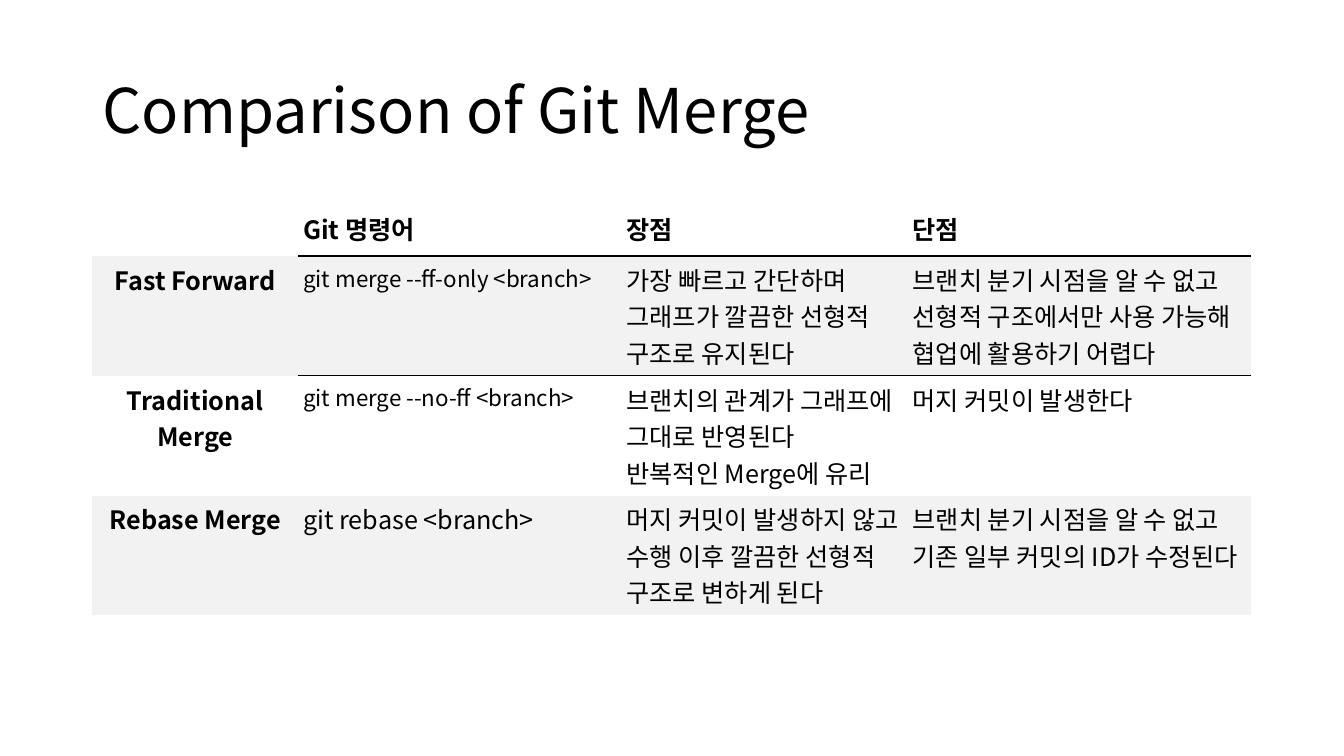
from lxml import etree
from pptx import Presentation
from pptx import util as u
from pptx.dml import color
from pptx.enum import text
from pptx.oxml import ns

ROWS = [
    ["", "Git 명령어", "장점", "단점"],
    ["Fast Forward", "git merge --ff-only <branch>",
     "가장 빠르고 간단하며\v그래프가 깔끔한 선형적\v구조로 유지된다",
     "브랜치 분기 시점을 알 수 없고\n선형적 구조에서만 사용 가능해 협업에 활용하기 어렵다"],
    ["Traditional\nMerge", "git merge --no-ff <branch>",
     "브랜치의 관계가 그래프에\v그대로 반영된다\n반복적인 Merge에 유리",
     "머지 커밋이 발생한다"],
    ["Rebase Merge", "git rebase <branch>",
     "머지 커밋이 발생하지 않고\v수행 이후 깔끔한 선형적 구조로 변하게 된다",
     "브랜치 분기 시점을 알 수 없고\n기존 일부 커밋의 ID가 수정된다"],
]
WIDTHS = [5.18, 8.15, 7.21, 8.66]
HEIGHTS = [1.37, 2.9, 2.9, 2.9]
NO_STYLE = "{2D5ABB26-0587-4C30-8999-92F81FD0307C}"


def paint(fill, code):
    fill.solid()
    fill.fore_color.rgb = color.RGBColor.from_string(code)


def write(frame, words, font, size=18, bold=False, ink="000000",
          align=text.PP_ALIGN.LEFT, space=None):
    frame.text = words
    for par in frame.paragraphs:
        par.alignment = align
        par.line_spacing = space
        for run in par.runs:
            run.font.name = font
            run.font.size = u.Pt(size)
            run.font.bold = bold
            paint(run.font.fill, ink)
            east = etree.SubElement(run.font._element, ns.qn("a:ea"))
            east.set("typeface", font)
            run.font._element.find(ns.qn("a:latin")).addnext(east)


class Deck:
    font = "Noto Sans CJK KR"
    band = "F2F2F2"
    line = "000000"

    def __init__(self):
        self.file = Presentation()
        self.file.slide_width = u.Cm(33.87)
        self.file.slide_height = u.Cm(19.05)
        self.slide = self.file.slides.add_slide(self.file.slide_layouts[5])

    def title(self, words, left, top, width, height):
        box = self.slide.shapes.title
        box.left, box.top = u.Cm(left), u.Cm(top)
        box.width, box.height = u.Cm(width), u.Cm(height)
        frame = box.text_frame
        write(frame, words, self.font, size=44, space=0.9)
        frame.vertical_anchor = text.MSO_ANCHOR.MIDDLE
        frame.auto_size = text.MSO_AUTO_SIZE.NONE

    def edge(self, cell, side):
        line = etree.Element(ns.qn("a:" + side), w=str(u.Pt(1)))
        fill = etree.SubElement(line, ns.qn("a:solidFill"))
        etree.SubElement(fill, ns.qn("a:srgbClr"), val=self.line)
        cell._tc.get_or_add_tcPr().insert(0, line)

    def cell(self, cell, words, row, col):
        cell.margin_left = cell.margin_right = u.Cm(0.13)
        cell.margin_top = cell.margin_bottom = u.Cm(0.13)
        head = row == 0
        cell.vertical_anchor = text.MSO_ANCHOR.MIDDLE if head else text.MSO_ANCHOR.TOP
        write(cell.text_frame, words, self.font,
              size=16 if "--" in words else 18, bold=head or col == 0,
              align=text.PP_ALIGN.LEFT if col else text.PP_ALIGN.CENTER)
        if row % 2:
            paint(cell.fill, self.band)
        else:
            cell.fill.background()
        if col and row < 2:
            self.edge(cell, "lnB" if head else "lnT")

    def table(self, rows, left, top, widths, heights):
        grid = self.slide.shapes.add_table(
            len(rows), len(widths), u.Cm(left), u.Cm(top),
            u.Cm(sum(widths)), u.Cm(sum(heights))).table
        grid.horz_banding = False
        grid._tbl.tblPr.find(ns.qn("a:tableStyleId")).text = NO_STYLE
        for column, width in zip(grid.columns, widths):
            column.width = u.Cm(width)
        for row, height in zip(grid.rows, heights):
            row.height = u.Cm(height)
        for r, line in enumerate(rows):
            for c, words in enumerate(line):
                self.cell(grid.cell(r, c), words, r, c)


def main():
    deck = Deck()
    deck.title("Comparison of Git Merge", 2.33, 1.01, 29.21, 3.68)
    deck.table(ROWS, 2.33, 5.08, WIDTHS, HEIGHTS)
    deck.file.save("out.pptx")


if __name__ == "__main__":
    main()
